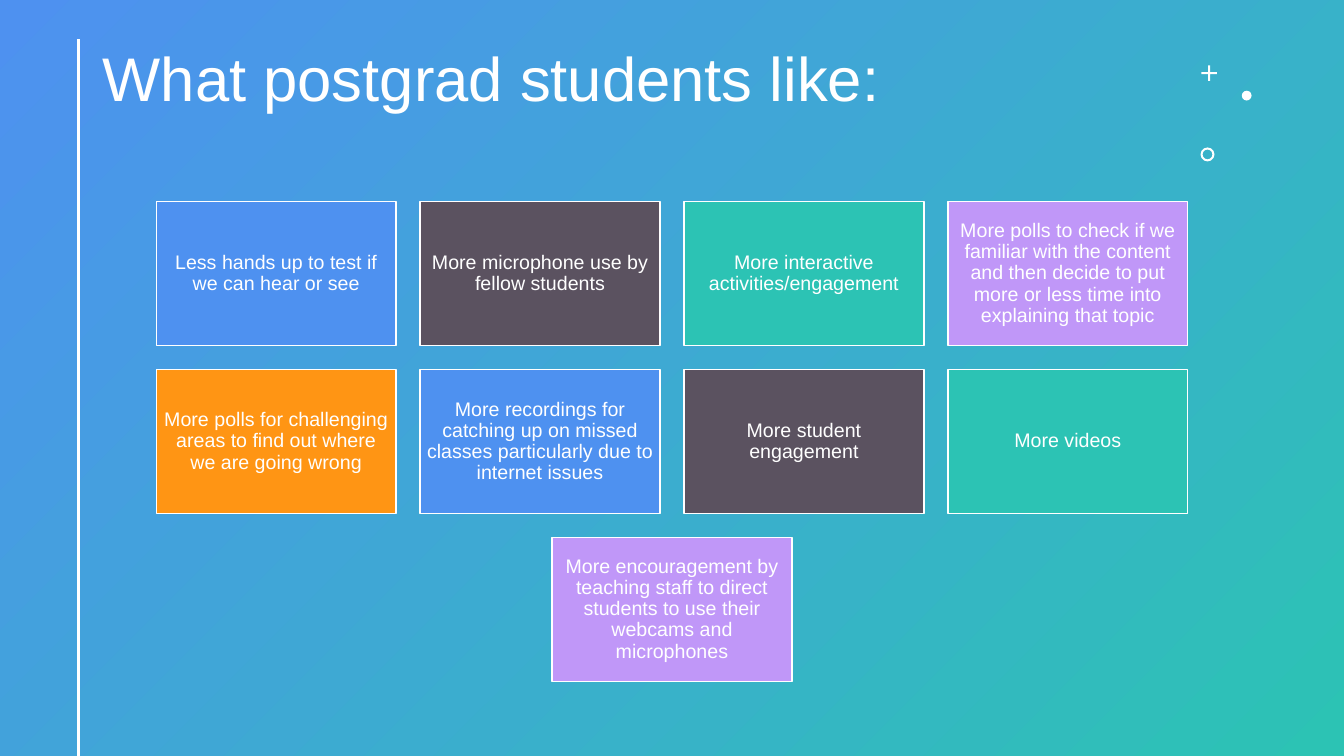
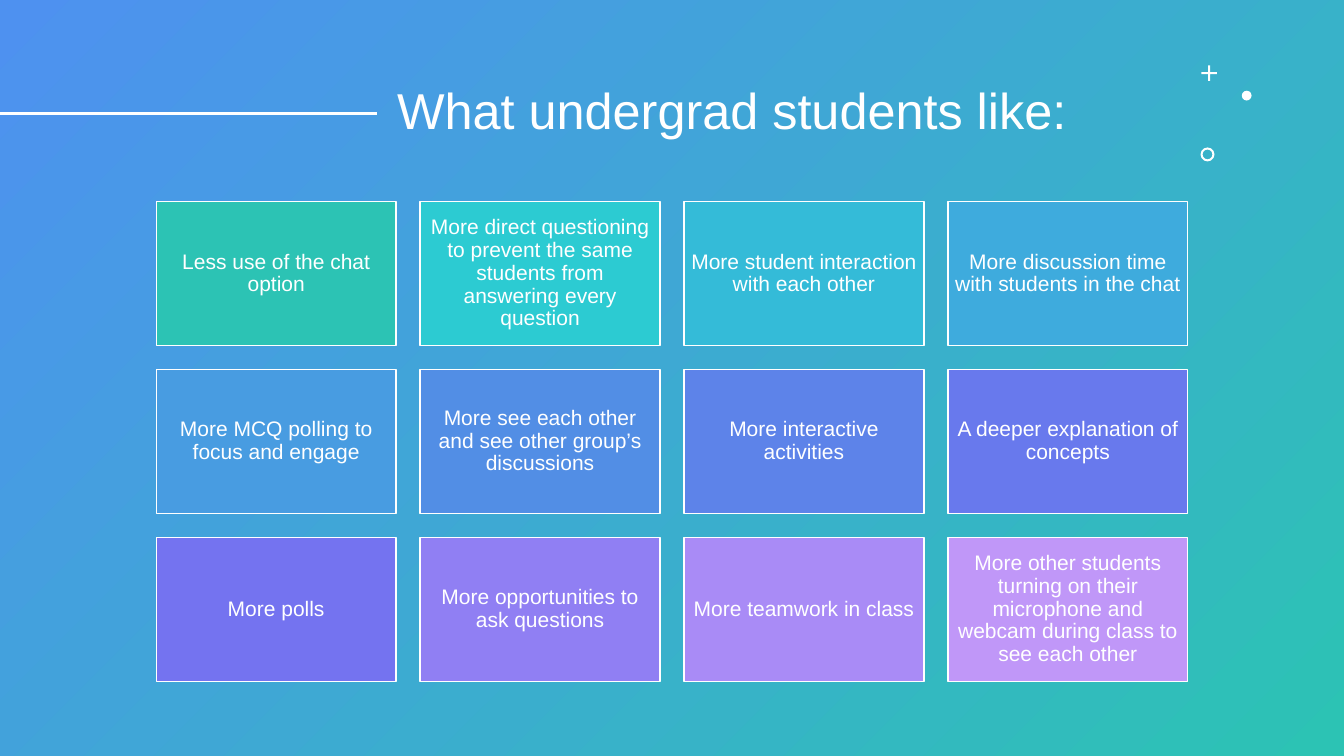
from itertools import cycle

from lxml.etree import SubElement
from pptx import Presentation
from pptx.dml.color import RGBColor
from pptx.enum.shapes import MSO_CONNECTOR, MSO_SHAPE
from pptx.enum.text import MSO_ANCHOR, MSO_AUTO_SIZE, PP_ALIGN
from pptx.oxml.ns import qn
from pptx.util import Pt

FONT = "Arial"
WHITE = RGBColor(0xFF, 0xFF, 0xFF)
BLUE = RGBColor(0x4E, 0x91, 0xF0)
SLATE = RGBColor(0x5B, 0x52, 0x60)
TEAL = RGBColor(0x2C, 0xC3, 0xB4)
LILAC = RGBColor(0xC0, 0x97, 0xF8)
ORANGE = RGBColor(0xFF, 0x95, 0x14)
ACCENTS = (BLUE, SLATE, TEAL, LILAC, ORANGE)
TEAL_TO_LILAC = (
    TEAL,
    RGBColor(0x2C, 0xCB, 0xD2),
    RGBColor(0x34, 0xBB, 0xD8),
    RGBColor(0x3E, 0xAB, 0xDD),
    RGBColor(0x48, 0x9C, 0xE1),
    RGBColor(0x52, 0x8E, 0xE5),
    RGBColor(0x5D, 0x83, 0xE9),
    RGBColor(0x68, 0x79, 0xED),
    RGBColor(0x74, 0x73, 0xF0),
    RGBColor(0x90, 0x7F, 0xF3),
    RGBColor(0xA9, 0x8B, 0xF6),
    LILAC,
)

PAGE_WIDTH, PAGE_HEIGHT = 960, 540
COLUMNS = 4
GRID_BOX = (111.6, 144, 736.8)
ORNAMENT_BOX = (857.5, 46.8)

POSTGRAD_WISHES = (
    "Less hands up to test if we can hear or see",
    "More microphone use by fellow students",
    "More interactive activities/engagement",
    "More polls to check if we familiar with the content and then decide "
    "to put more or less time into explaining that topic",
    "More polls for challenging areas to find out where we are going wrong",
    "More recordings for catching up on missed classes particularly due to "
    "internet issues",
    "More student engagement",
    "More videos",
    "More encouragement by teaching staff to direct students to use their "
    "webcams and microphones",
)
UNDERGRAD_WISHES = (
    "Less use of the chat option",
    "More direct questioning to prevent the same students from answering "
    "every question",
    "More student interaction with each other",
    "More discussion time with students in the chat",
    "More MCQ polling to focus and engage",
    "More see each other and see other group’s discussions",
    "More interactive activities",
    "A deeper explanation of concepts",
    "More polls",
    "More opportunities to ask questions",
    "More teamwork in class",
    "More other students turning on their microphone and webcam during "
    "class to see each other",
)


def paint_background(master):
    """Give every slide the diagonal blue to teal gradient."""
    fill = master.background.fill
    fill.gradient()
    fill.gradient_angle = 315
    for stop, color in zip(fill.gradient_stops, (BLUE, TEAL)):
        stop.color.rgb = color


def write_text(frame, text, size, align):
    """Write one white paragraph, centred vertically in its frame."""
    frame.text = text
    frame.word_wrap = True
    frame.auto_size = MSO_AUTO_SIZE.NONE
    frame.vertical_anchor = MSO_ANCHOR.MIDDLE
    para = frame.paragraphs[0]
    para.alignment = align
    para.line_spacing = 0.9
    para.font.name = FONT
    para.font.size = Pt(size)
    para.font.color.rgb = WHITE


def place_title(page, box, text, size):
    """Move and format the title placeholder."""
    title = page.shapes.title
    title.left, title.top, title.width, title.height = map(Pt, box)
    write_text(title.text_frame, text, size, PP_ALIGN.LEFT)


def add_rule(page, ends):
    """Draw the white line beside the title."""
    rule = page.shapes.add_connector(MSO_CONNECTOR.STRAIGHT, *map(Pt, ends))
    rule.line.color.rgb = WHITE
    rule.line.width = Pt(2)
    SubElement(rule.element.spPr, qn("a:effectLst"))


def add_filled_shape(page, kind, box, color):
    """Add a flat shape without an outline."""
    shape = page.shapes.add_shape(kind, *map(Pt, box))
    shape.shadow.inherit = False
    shape.fill.solid()
    shape.fill.fore_color.rgb = color
    shape.line.fill.background()
    return shape


def add_ornaments(page, box):
    """Place the plus, dot and ring in the top right corner."""
    left, top = box
    plus = add_filled_shape(page, MSO_SHAPE.CROSS, (left + 0.7, top, 11, 11), WHITE)
    plus.adjustments[0] = 0.44
    add_filled_shape(page, MSO_SHAPE.OVAL, (left + 29.5, top + 18, 7, 7), WHITE)
    ring = add_filled_shape(page, MSO_SHAPE.DONUT, (left, top + 58.5, 10, 10), WHITE)
    ring.adjustments[0] = 0.15


def add_card_grid(page, box, wishes, colors, size):
    """Lay out cards in rows, with a short last row centred."""
    left, top, width = box
    card_width = width / (COLUMNS + (COLUMNS - 1) * 0.1)
    card_height, gap = card_width * 0.6, card_width * 0.1
    for index, (wish, color) in enumerate(zip(wishes, cycle(colors))):
        row, column = divmod(index, COLUMNS)
        missing = COLUMNS - min(COLUMNS, len(wishes) - row * COLUMNS)
        card_box = (
            left + (column + missing / 2) * (card_width + gap),
            top + row * (card_height + gap),
            card_width,
            card_height,
        )
        card = add_filled_shape(page, MSO_SHAPE.RECTANGLE, card_box, color)
        card.line.color.rgb = WHITE
        card.line.width = Pt(1)
        frame = card.text_frame
        frame.margin_left = frame.margin_right = Pt(4.2)
        frame.margin_top = frame.margin_bottom = Pt(4.2)
        write_text(frame, wish, size, PP_ALIGN.CENTER)


def add_wish_slide(deck, title, title_box, title_size, rule, wishes, colors, size):
    """Build one slide of student wishes."""
    page = deck.slides.add_slide(deck.slide_layouts[5])
    place_title(page, title_box, title, title_size)
    add_rule(page, rule)
    add_ornaments(page, ORNAMENT_BOX)
    add_card_grid(page, GRID_BOX, wishes, colors, size)


def main():
    """Build and save the deck."""
    deck = Presentation()
    deck.slide_width, deck.slide_height = Pt(PAGE_WIDTH), Pt(PAGE_HEIGHT)
    paint_background(deck.slide_master)
    add_wish_slide(
        deck, "What postgrad students like:", (66.2, 29, 772, 58), 44,
        (56, 28, 56, PAGE_HEIGHT), POSTGRAD_WISHES, ACCENTS, 14,
    )
    add_wish_slide(
        deck, "What undergrad students like:", (276.5, 29, 564, 104), 36,
        (0, 81, 269, 81), UNDERGRAD_WISHES, TEAL_TO_LILAC, 15,
    )
    deck.save("out.pptx")


if __name__ == "__main__":
    main()
